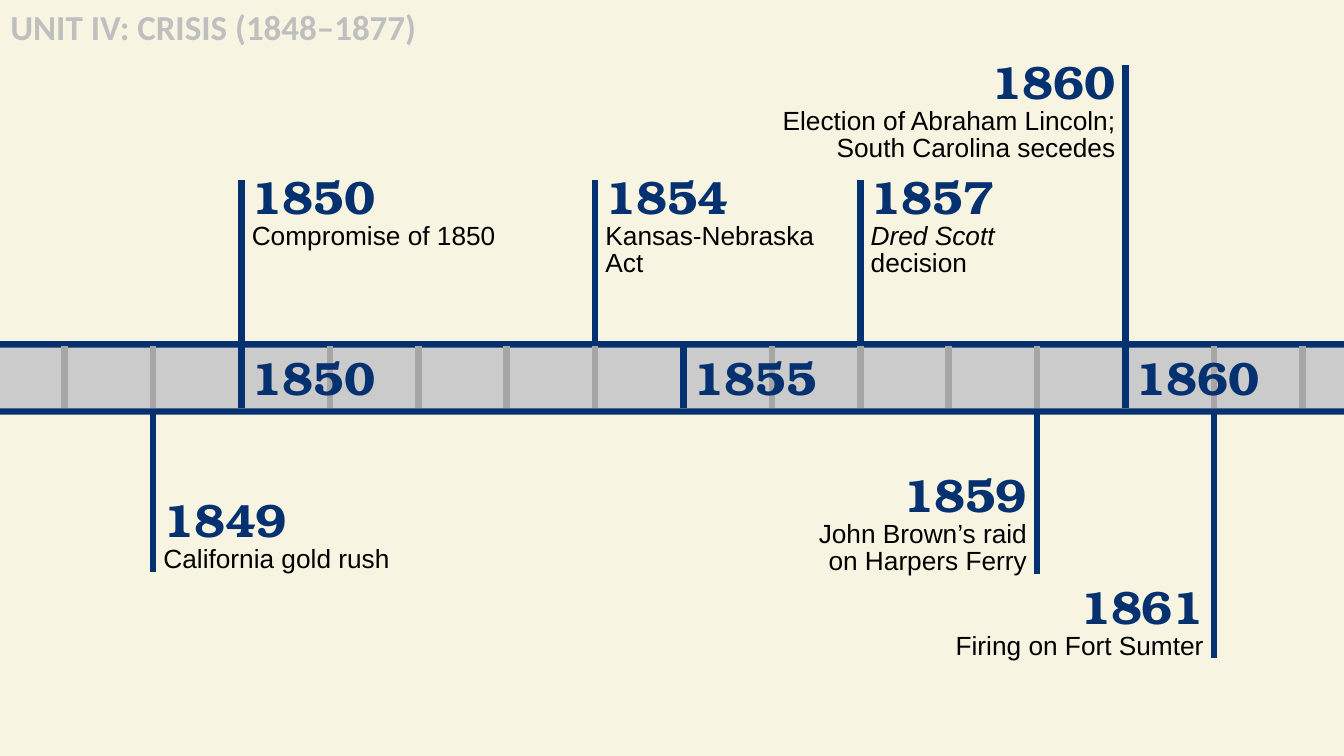
import pptx
import pptx.dml.color
import pptx.enum.shapes
import pptx.enum.text
import pptx.oxml
import pptx.util
from pptx.util import Inches

NAVY, GRAY, BLACK = "063170", "A6A6A6", "000000"
SERIF, SANS = "TeX Gyre Bonum", "Arial"
START, STEP = 2.3, 0.842  # place of 1850 and width of one year

# year, line top, line bottom, text top, width, height, right-aligned, wrap, runs
EVENTS = [
    (1850, 1.71, 3.26, 1.63, 2.54, 0.82, False, False,
     [("Compromise of 1850", False)]),
    (1854, 1.71, 3.26, 1.63, 2.23, 1.07, False, True,
     [("Kansas-Nebraska Act", False)]),
    (1849, 3.9, 5.45, 4.71, 2.38, 0.82, False, False,
     [("California gold rush", False)]),
    (1857, 1.71, 3.26, 1.63, 1.69, 1.07, False, True,
     [("Dred Scott ", True), ("decision", False)]),
    (1859, 3.93, 5.47, 4.47, 2.31, 1.07, True, True,
     [("John Brown’s raid on Harpers Ferry", False)]),
    (1861, 3.9, 6.27, 5.54, 2.76, 0.82, True, True,
     [("Firing on Fort Sumter", False)]),
    (1860, 0.62, 3.26, 0.54, 3.49, 1.07, True, True,
     [("Election of Abraham Lincoln; South Carolina secedes", False)]),
]


def color(code):
    return pptx.dml.color.RGBColor.from_string(code)


def place(year):
    return START + (year - 1850) * STEP


def write(par, text, size=32, font=SERIF, tint=NAVY, bold=True, italic=False):
    run = par.add_run()
    run.text = text
    run.font.size = pptx.util.Pt(size)
    run.font.name = font
    run.font.color.rgb = color(tint)
    run.font.bold = bold
    run.font.italic = italic


def frame(slide, left, top, width, height, wrap=True):
    box = slide.shapes.add_textbox(
        Inches(left), Inches(top), Inches(width), Inches(height))
    box.text_frame.word_wrap = wrap
    return box.text_frame


def bar(slide, top, height, tint):
    shape = slide.shapes.add_shape(
        pptx.enum.shapes.MSO_SHAPE.RECTANGLE,
        Inches(-0.05), Inches(top), Inches(13.53), Inches(height))
    shape.shadow.inherit = False
    shape.fill.solid()
    shape.fill.fore_color.rgb = color(tint)
    shape.line.fill.background()


def post(slide, year, top, end, tint=NAVY):
    x = Inches(place(year))
    line = slide.shapes.add_connector(
        pptx.enum.shapes.MSO_CONNECTOR.STRAIGHT, x, Inches(top), x, Inches(end))
    line.line.width = pptx.util.Pt(4.5)
    line.line.color.rgb = color(tint)
    props = line._element.spPr
    props.append(pptx.oxml.parse_xml(
        '<a:effectLst xmlns:a='
        '"http://schemas.openxmlformats.org/drawingml/2006/main"/>'))


def event(slide, year, top, end, head, width, height, right, wrap, runs):
    post(slide, year, top, end)
    left = place(year) - (width if right else 0)
    body = frame(slide, left, head, width, height, wrap)
    write(body.paragraphs[0], str(year))
    detail = body.add_paragraph()
    for text, italic in runs:
        write(detail, text, size=18, font=SANS, tint=BLACK, bold=False,
              italic=italic)
    align = pptx.enum.text.PP_ALIGN
    for par in body.paragraphs:
        par.line_spacing = 0.85
        par.alignment = align.RIGHT if right else align.LEFT


def main():
    deck = pptx.Presentation()
    deck.slide_width, deck.slide_height = Inches(12.8), Inches(7.2)
    slide = deck.slides.add_slide(deck.slide_layouts[6])
    slide.background.fill.solid()
    slide.background.fill.fore_color.rgb = color("F7F5E1")

    # Unit title
    title = frame(slide, 0, 0, 4.82, 0.5)
    write(title.paragraphs[0], "UNIT IV: CRISIS (1848–1877)", size=24,
          font="Calibri", tint="BFBFBF")

    # Time band with a tick for each year
    bar(slide, 3.25, 0.7, NAVY)
    bar(slide, 3.31, 0.58, "CBCBCB")
    for year in range(1848, 1863):
        post(slide, year, 3.3, 3.89, GRAY if year % 5 else NAVY)
    for year in range(1850, 1861, 5):
        label = frame(slide, place(year), 3.27, 1.64, 0.64)
        write(label.paragraphs[0], str(year))

    # Events above and below the band
    for item in EVENTS:
        event(slide, *item)

    deck.save("out.pptx")


if __name__ == "__main__":
    main()
